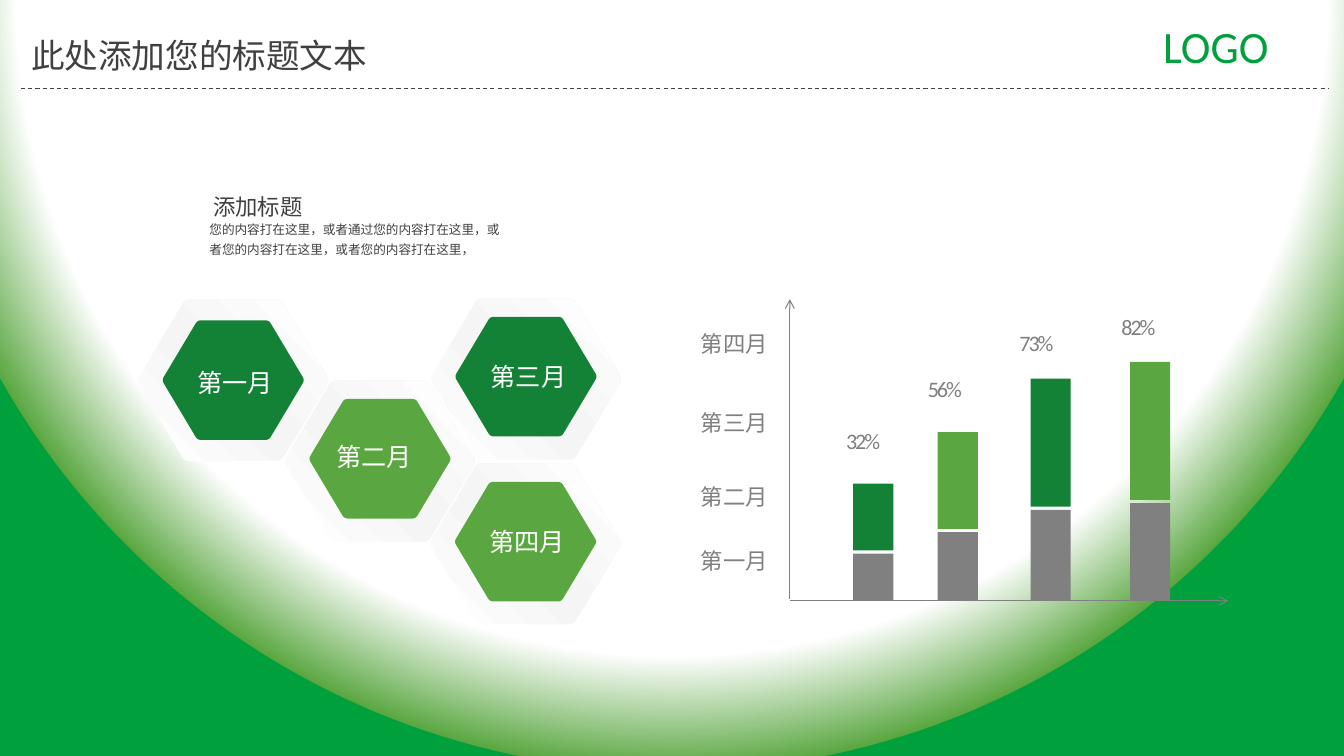
import math

import pptx
import pptx.dml.color
import pptx.enum.dml
import pptx.enum.shapes
import pptx.enum.text
import pptx.oxml
import pptx.oxml.ns
import pptx.util

Cm = pptx.util.Cm
Pt = pptx.util.Pt
RGB = pptx.dml.color.RGBColor
Align = pptx.enum.text.PP_ALIGN

WHITE = RGB(0xFF, 0xFF, 0xFF)
PEARL = RGB(0xF5, 0xF5, 0xF5)
DARK = RGB(0x40, 0x40, 0x40)
GRAY = RGB(0x80, 0x80, 0x80)
BRAND_GREEN = RGB(0x00, 0xA0, 0x3C)
DEEP_GREEN = RGB(0x13, 0x82, 0x36)
LEAF_GREEN = RGB(0x5A, 0xA7, 0x41)

LATIN = "Calibri"
CHINESE = "Noto Sans CJK SC"
NS = pptx.oxml.ns.nsdecls("a")
RADIAL = ('<a:path {} path="circle"><a:fillToRect l="50000" t="-80000" '
          'r="50000" b="180000"/></a:path>').format(NS)
DIAGONAL = '<a:lin {} ang="18900000" scaled="0"/>'.format(NS)

HEX_RATIO = 0.837
HEX_ROUNDING = 0.05
BAR_WIDTH = 1.01
BAR_GAP = 0.08
BASELINE = 15.14
AXIS_X = 19.91


class MonthlySlide:
    def __init__(self, deck):
        self.slide = deck.slides.add_slide(deck.slide_layouts[5])
        self.shapes = self.slide.shapes

    def gradient(self, fill, owner, stops, direction):
        fill.gradient()
        grad = owner.xpath(".//a:gradFill")[0]
        for child in list(grad):
            grad.remove(child)
        marks = "".join(
            '<a:gs pos="{}"><a:srgbClr val="{}"/></a:gs>'.format(place * 1000, color)
            for place, color in stops)
        grad.append(pptx.oxml.parse_xml("<a:gsLst {}>{}</a:gsLst>".format(NS, marks)))
        grad.append(pptx.oxml.parse_xml(direction))

    def background(self, stops):
        self.gradient(self.slide.background.fill, self.slide.element, stops, RADIAL)

    def style_text(self, shape, words, size, color, face=CHINESE, align=Align.LEFT,
                   spacing=None, tracking=None, inset=0.13):
        frame = shape.text_frame
        frame.text = words
        frame_format = {
            "word_wrap": True,
            "auto_size": pptx.enum.text.MSO_AUTO_SIZE.NONE,
            "vertical_anchor": pptx.enum.text.MSO_ANCHOR.TOP,
            "margin_top": Cm(inset),
            "margin_bottom": Cm(inset),
        }
        for name, value in frame_format.items():
            setattr(frame, name, value)
        paragraph = frame.paragraphs[0]
        for name, value in {"alignment": align, "line_spacing": spacing}.items():
            setattr(paragraph, name, value)
        run = paragraph.runs[0]
        for name, value in {"size": Pt(size), "name": face}.items():
            setattr(run.font, name, value)
        run.font.color.rgb = color
        properties = run.font._element
        properties.append(pptx.oxml.parse_xml(
            '<a:ea {} typeface="{}"/>'.format(NS, face)))
        if tracking is not None:
            properties.set("spc", str(tracking))

    def title(self, words, box, **style):
        heading = self.shapes.title
        for name, value in zip(("left", "top", "width", "height"), box):
            setattr(heading, name, Cm(value))
        self.style_text(heading, words, **style)

    def text(self, words, box, **style):
        self.style_text(self.shapes.add_textbox(*map(Cm, box)), words, **style)

    def line(self, start, end, color, dashed=False, arrow=False):
        rule = self.shapes.add_connector(
            pptx.enum.shapes.MSO_CONNECTOR.STRAIGHT, *map(Cm, start + end))
        rule.line.color.rgb = color
        rule.line.width = Pt(0.75)
        if dashed:
            rule.line.dash_style = pptx.enum.dml.MSO_LINE.DASH
        properties = rule._element.spPr
        if arrow:
            properties.xpath("./a:ln")[0].append(pptx.oxml.parse_xml(
                '<a:tailEnd {} type="arrow"/>'.format(NS)))
        properties.append(pptx.oxml.parse_xml("<a:effectLst {}/>".format(NS)))

    def plain(self, shape, color):
        shape.shadow.inherit = False
        shape.line.fill.background()
        shape.fill.solid()
        shape.fill.fore_color.rgb = color

    def bar(self, left, top, height, color):
        block = self.shapes.add_shape(
            pptx.enum.shapes.MSO_SHAPE.RECTANGLE,
            *map(Cm, (left, top, BAR_WIDTH, height)))
        self.plain(block, color)

    def hexagon(self, center, radius, color, stops=None):
        tall = radius * HEX_RATIO
        corners = [(center[0] + x * radius, center[1] + y * tall)
                   for x, y in ((1, 0), (0.5, 1), (-0.5, 1),
                                (-1, 0), (-0.5, -1), (0.5, -1))]
        outline = []
        for index, corner in enumerate(corners):
            ends = []
            for neighbour in (corners[index - 1], corners[(index + 1) % 6]):
                share = HEX_ROUNDING * radius / math.dist(corner, neighbour)
                ends.append([c + (n - c) * share for c, n in zip(corner, neighbour)])
            for step in range(6):
                t = step / 5
                outline.append(tuple(
                    Cm((1 - t) ** 2 * a + 2 * t * (1 - t) * c + t ** 2 * b)
                    for a, c, b in zip(ends[0], corner, ends[1])))
        builder = self.shapes.build_freeform(*outline[0])
        builder.add_line_segments(outline[1:], close=True)
        tile = builder.convert_to_shape()
        self.plain(tile, color)
        if stops:
            self.gradient(tile.fill, tile._element, stops, DIAGONAL)


def main():
    deck = pptx.Presentation()
    deck.slide_width, deck.slide_height = Cm(33.88), Cm(19.05)
    page = MonthlySlide(deck)
    page.background([(0, WHITE), (85, WHITE), (100, LEAF_GREEN), (100, BRAND_GREEN)])
    page.line((0.53, 2.24), (33.5, 2.24), DARK, dashed=True)
    page.text("LOGO", (28.35, 0.33, 4.6, 1.63), size=32, color=BRAND_GREEN,
              face=LATIN, align=Align.CENTER)
    page.title("此处添加您的标题文本", (0.53, 0.74, 12.4, 1.27), size=24, color=DARK)

    bars = [
        ("32%", 21.51, 1.19, 1.68, DEEP_GREEN, (21.08, 10.64)),
        ("56%", 23.64, 1.73, 2.44, LEAF_GREEN, (23.14, 9.32)),
        ("73%", 25.98, 2.29, 3.23, DEEP_GREEN, (25.45, 8.18)),
        ("82%", 28.49, 2.46, 3.48, LEAF_GREEN, (28.02, 7.77)),
    ]
    for share, left, lower, upper, color, corner in bars:
        page.text(share, corner + (1.85, 0.94), size=15.8, color=GRAY,
                  face=LATIN, tracking=-150)
        page.bar(left, BASELINE - lower, lower, GRAY)
        page.bar(left, BASELINE - lower - BAR_GAP - upper, upper, color)

    months = [
        ("第一月", (5.88, 9.58), 9.58, DEEP_GREEN, (4.72, 9.12), 13.67),
        ("第二月", (9.58, 11.62), 11.56, LEAF_GREEN, (8.23, 11.0), 12.04),
        ("第三月", (13.26, 9.55), 9.49, DEEP_GREEN, (12.12, 8.97), 10.19),
        ("第四月", (13.25, 13.7), 13.65, LEAF_GREEN, (12.09, 13.13), 8.18),
    ]
    sheen = [(0, WHITE), (47, PEARL), (100, WHITE)]
    for month, center, core_y, color, corner, axis_top in months:
        page.hexagon(center, 2.44, WHITE)
        page.hexagon(center, 2.42, PEARL, sheen)
        page.hexagon((center[0], core_y), 1.8, color)
        page.text(month, corner + (2.92, 1.02), size=18, color=WHITE)
        page.text(month, (17.42, axis_top, 2.46, 0.94), size=16, color=GRAY)

    page.line((AXIS_X, BASELINE), (30.96, BASELINE), GRAY, arrow=True)
    page.line((AXIS_X, 15.09), (AXIS_X, 7.54), GRAY, arrow=True)
    page.text("您的内容打在这里，或者通过您的内容打在这里，或者您的内容打在这里，或者您的内容打在这里，",
              (5.03, 5.36, 8.08, 1.24), size=9, color=DARK, spacing=1.3)
    page.text("添加标题", (5.13, 4.52, 3.51, 1.02), size=16, color=DARK,
              spacing=1.5, inset=0)
    deck.save("out.pptx")


if __name__ == "__main__":
    main()
